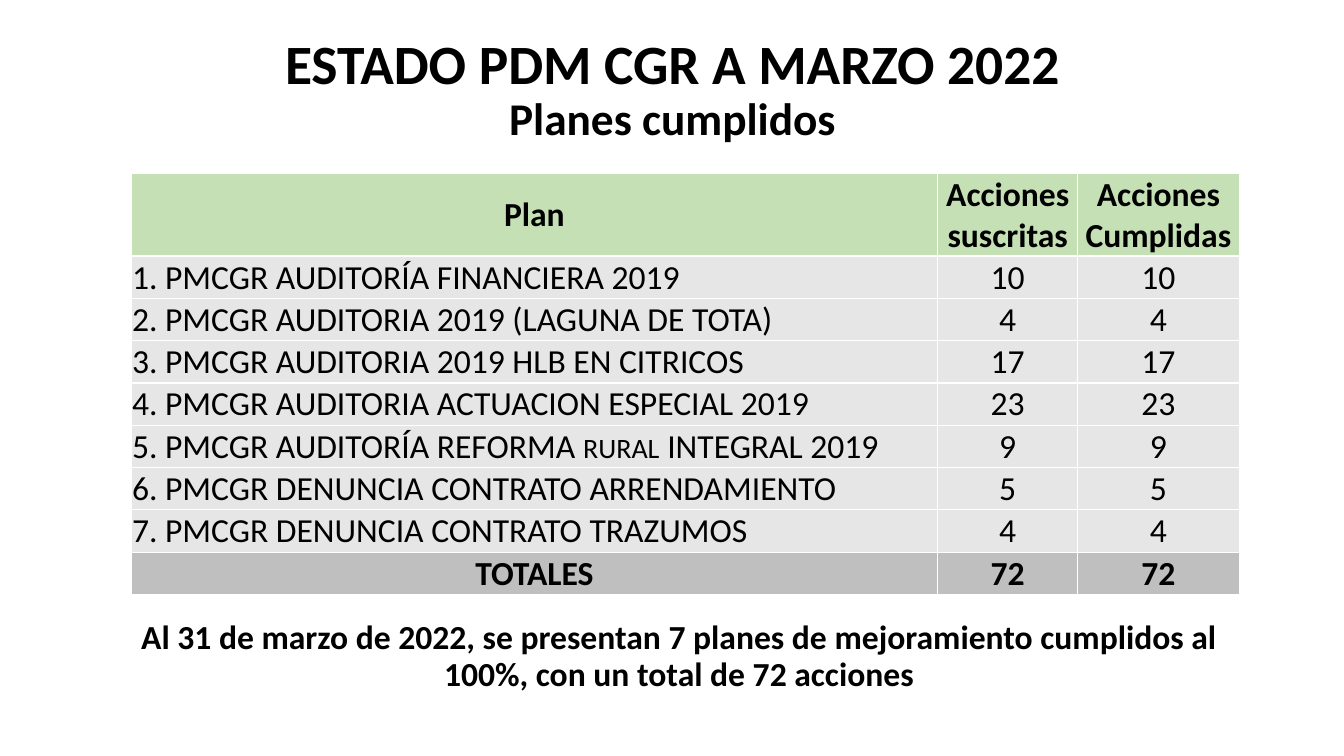
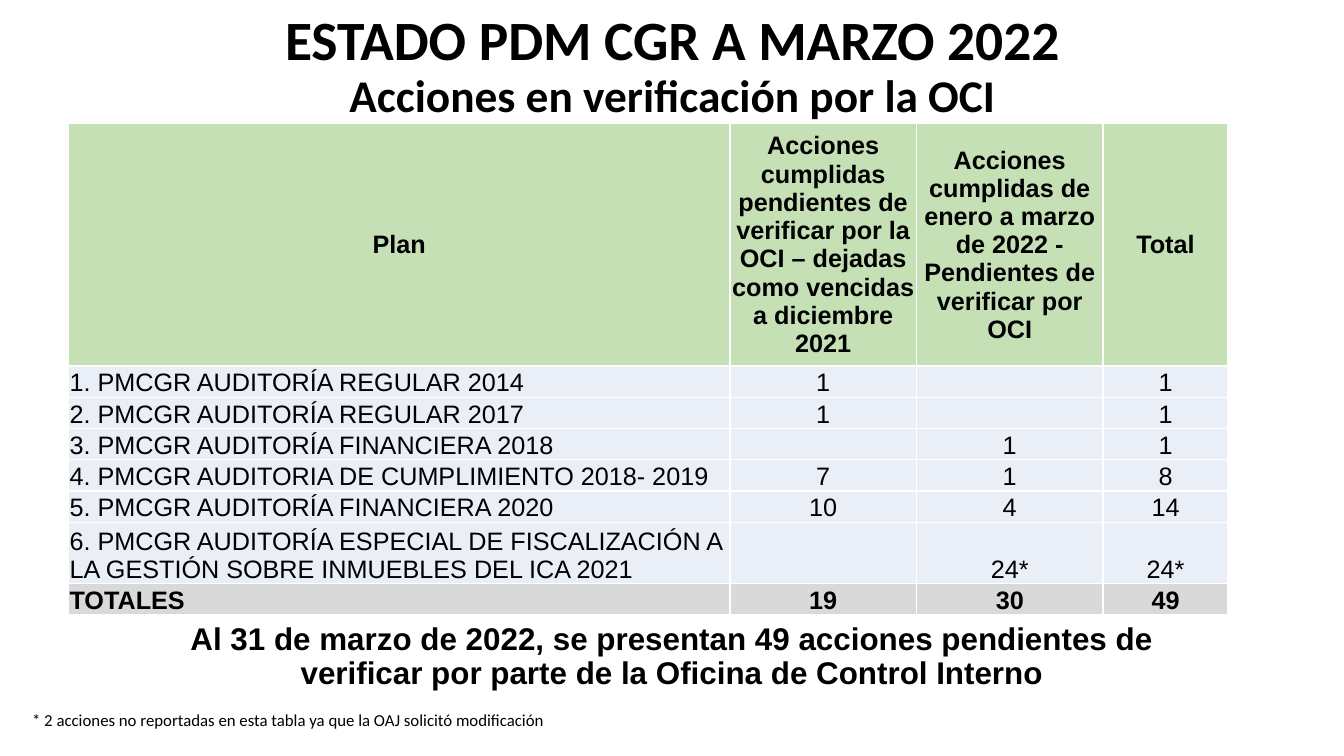
"""Build two slides on the state of the improvement plans at March 2022."""
from dataclasses import dataclass

from lxml.etree import SubElement
from pptx import Presentation
from pptx.dml.color import RGBColor
from pptx.enum.text import MSO_ANCHOR as Anchor, MSO_AUTO_SIZE as Fit, PP_ALIGN as Align
from pptx.oxml.ns import qn
from pptx.util import Inches, Pt


@dataclass(frozen=True)
class Theme:
    text: str = "000000"
    border: str = "FFFFFF"
    header: str = "C5E0B4"
    font: str = "Calibri"
    alt_font: str = "Arial"
    title: float = 39.6
    subtitle: float = 32.4
    footnote: float = 12
    small: float = 20


T = Theme()
HEADING = "ESTADO PDM CGR A MARZO 2022"

SLIDES = [
    {
        "subtitle": "Planes cumplidos",
        "title_box": (0.92, 0.4, 11.5, 1),
        "table": {
            "at": (1.3, 1.72), "cols": (8, 1.39, 1.6),
            "rows": (0.82, *[0.42] * 8),
            "font": T.font, "size": 24, "anchor": Anchor.MIDDLE,
            "body": "E7E6E6", "total": "BFBFBF", "total_align": Align.CENTER,
            "cells": [
                ("Plan", "Acciones suscritas", "Acciones Cumplidas"),
                ("1. PMCGR AUDITORÍA FINANCIERA 2019", "10", "10"),
                ("2. PMCGR AUDITORIA 2019 (LAGUNA DE TOTA)", "4", "4"),
                ("3. PMCGR AUDITORIA 2019 HLB EN CITRICOS", "17", "17"),
                ("4. PMCGR AUDITORIA ACTUACION ESPECIAL 2019", "23", "23"),
                ([("5. PMCGR AUDITORÍA REFORMA ", 24), ("RURAL", T.small),
                  (" INTEGRAL 2019", 24)], "9", "9"),
                ("6. PMCGR DENUNCIA CONTRATO ARRENDAMIENTO", "5", "5"),
                ("7. PMCGR DENUNCIA CONTRATO TRAZUMOS", "4", "4"),
                ("TOTALES", "72", "72"),
            ],
        },
        "summary": {
            "text": "Al 31 de marzo de 2022, se presentan 7 planes de mejoramiento "
                    "cumplidos al 100%, con un total de 72 acciones",
            "box": (1.3, 6.09, 10.87, 0.86), "font": T.font, "size": 24,
        },
    },
    {
        "subtitle": "Acciones en verificación por la OCI",
        "title_box": (0.92, 0.2, 11.5, 0.94),
        "table": {
            "at": (0.68, 1.22), "cols": (6.56, 1.85, 1.85, 1.24),
            "rows": (2.24, *[0.3] * 5, 0.59, 0.3),
            "font": T.alt_font, "size": 18, "anchor": Anchor.BOTTOM,
            "body": "EAEFF7", "total": "D9D9D9", "total_align": Align.LEFT,
            "cells": [
                ("Plan",
                 "Acciones cumplidas pendientes de verificar por la OCI – "
                 "dejadas como vencidas a diciembre 2021",
                 "Acciones cumplidas de enero a marzo de 2022 - "
                 "Pendientes de verificar por OCI",
                 "Total"),
                ("1. PMCGR AUDITORÍA REGULAR 2014", "1", "", "1"),
                ("2. PMCGR AUDITORÍA REGULAR 2017", "1", "", "1"),
                ("3. PMCGR AUDITORÍA FINANCIERA 2018", "", "1", "1"),
                ("4. PMCGR AUDITORIA DE CUMPLIMIENTO 2018- 2019", "7", "1", "8"),
                ("5. PMCGR AUDITORÍA FINANCIERA 2020", "10", "4", "14"),
                ("6. PMCGR AUDITORÍA ESPECIAL DE FISCALIZACIÓN A LA GESTIÓN "
                 "SOBRE INMUEBLES DEL ICA 2021", "", "24*", "24*"),
                ("TOTALES", "19", "30", "49"),
            ],
        },
        "summary": {
            "text": "Al 31 de marzo de 2022, se presentan 49 acciones pendientes de "
                    "verificar por parte de la Oficina de Control Interno",
            "box": (1.16, 6.05, 11.02, 0.94), "font": T.alt_font, "size": 22.4,
        },
        "footnote": {
            "text": "* 2 acciones no reportadas en esta tabla ya que la OAJ "
                    "solicitó modificación",
            "box": (0.22, 6.99, 8.09, 0.3),
        },
    },
]


def set_attrs(obj, **values):
    for name, value in values.items():
        setattr(obj, name, value)


def add_run(p, text, font, size, bold):
    r = p.add_run()
    r.text = text
    set_attrs(r.font, name=font, size=Pt(size), bold=bold)
    r.font.color.rgb = RGBColor.from_string(T.text)


def add_title(s, subtitle, box):
    sp = s.shapes.title
    set_attrs(sp, **dict(zip(("left", "top", "width", "height"), map(Inches, box))))
    tf = sp.text_frame
    set_attrs(tf, word_wrap=True, auto_size=Fit.NONE, vertical_anchor=Anchor.MIDDLE)
    p = tf.paragraphs[0]
    set_attrs(p, alignment=Align.CENTER, line_spacing=0.9)
    add_run(p, HEADING, T.font, T.title, True)
    p.add_line_break()
    SubElement(p._p.find(qn("a:br")), qn("a:rPr"), sz=str(round(T.title * 100)))
    add_run(p, subtitle, T.font, T.subtitle, True)


def add_text(s, text, box, font=T.font, size=T.footnote, bold=False,
             align=Align.LEFT, anchor=Anchor.TOP, spacing=1.0):
    tf = s.shapes.add_textbox(*map(Inches, box)).text_frame
    set_attrs(tf, word_wrap=True, vertical_anchor=anchor)
    p = tf.paragraphs[0]
    set_attrs(p, alignment=align, line_spacing=spacing)
    add_run(p, text, font, size, bold)


def add_borders(cell):
    tc_pr = cell._tc.get_or_add_tcPr()
    for side in "LRTB":
        ln = SubElement(tc_pr, qn(f"a:ln{side}"), w=str(Pt(1)))
        SubElement(SubElement(ln, qn("a:solidFill")), qn("a:srgbClr"), val=T.border)


def fill_cell(p, content, font, size, bold):
    if not content:
        SubElement(p._p, qn("a:endParaRPr"), sz=str(round(T.footnote * 100)))
        return
    runs = [(content, size)] if isinstance(content, str) else content
    for text, pts in runs:
        add_run(p, text, font, pts, bold)


def add_plan_table(s, spec):
    cells, cols, rows = spec["cells"], spec["cols"], spec["rows"]
    size = map(Inches, (*spec["at"], sum(cols), sum(rows)))
    table = s.shapes.add_table(len(rows), len(cols), *size).table
    for col, width in zip(table.columns, cols):
        col.width = Inches(width)
    last = len(rows) - 1
    for i, (row, height) in enumerate(zip(table.rows, rows)):
        row.height = Inches(height)
        fill = {0: T.header, last: spec["total"]}.get(i, spec["body"])
        first_align = {0: Align.CENTER, last: spec["total_align"]}.get(i, Align.LEFT)
        for j, (cell, content) in enumerate(zip(row.cells, cells[i])):
            edge = Inches(0.01)
            set_attrs(cell, margin_left=edge, margin_right=edge, margin_top=edge,
                      margin_bottom=0,
                      vertical_anchor=spec["anchor"] if i else Anchor.MIDDLE)
            add_borders(cell)
            cell.fill.solid()
            cell.fill.fore_color.rgb = RGBColor.from_string(fill)
            p = cell.text_frame.paragraphs[0]
            p.alignment = Align.CENTER if j else first_align
            fill_cell(p, content, spec["font"], spec["size"], i in (0, last))


def main():
    prs = Presentation()
    set_attrs(prs, slide_width=Inches(13.33), slide_height=Inches(7.5))
    for data in SLIDES:
        s = prs.slides.add_slide(prs.slide_layouts[5])
        add_title(s, data["subtitle"], data["title_box"])
        add_text(s, **data["summary"], bold=True, align=Align.CENTER,
                 anchor=Anchor.MIDDLE, spacing=0.9)
        add_plan_table(s, data["table"])
        if "footnote" in data:
            add_text(s, **data["footnote"])
    prs.save("out.pptx")


if __name__ == "__main__":
    main()
